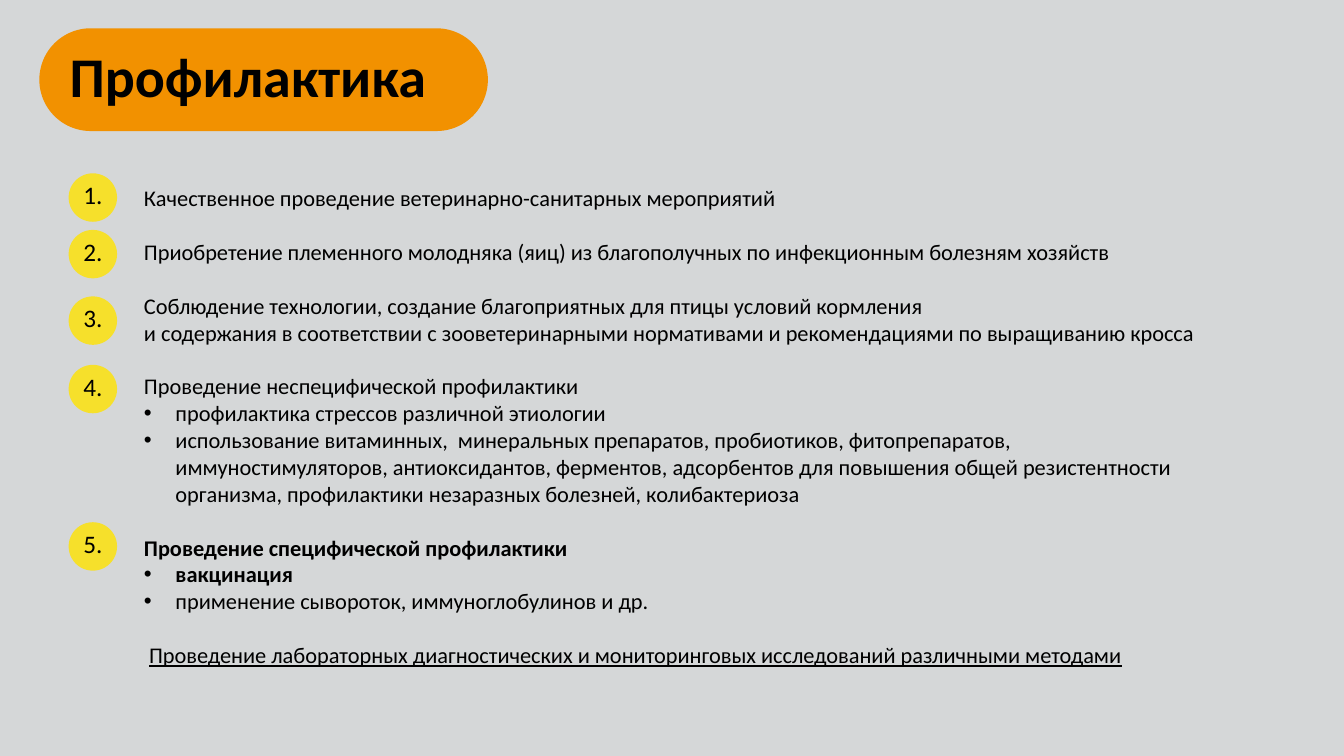
"""Build the slide on disease prevention in poultry farming."""
from lxml import etree
from pptx import Presentation
from pptx.dml.color import RGBColor
from pptx.enum.shapes import MSO_SHAPE
from pptx.enum.text import MSO_ANCHOR, MSO_AUTO_SIZE, PP_ALIGN
from pptx.oxml.ns import qn
from pptx.util import Pt

ROUNDED, OVAL = MSO_SHAPE.ROUNDED_RECTANGLE, MSO_SHAPE.OVAL
LEFT, CENTER = PP_ALIGN.LEFT, PP_ALIGN.CENTER
TOP, MIDDLE = MSO_ANCHOR.TOP, MSO_ANCHOR.MIDDLE
NO_AUTOFIT = MSO_AUTO_SIZE.NONE

GRAY = RGBColor(0xD5, 0xD7, 0xD8)
ORANGE = RGBColor(0xF2, 0x91, 0x00)
YELLOW = RGBColor(0xF6, 0xE0, 0x2B)
BLACK = RGBColor(0x00, 0x00, 0x00)

TITLE_ONLY = 5
BODY_SIZE = 16
ITEM_GAP = 19.2
BADGE_SIZE = 34.6
BADGE_TOPS = [123.8, 164.2, 211.7, 260.6, 373]

ITEMS = [
    ("Качественное проведение ветеринарно-санитарных мероприятий", {}),
    ("Приобретение племенного молодняка (яиц) из благополучных по инфекционным болезням хозяйств", {}),
    ("Соблюдение технологии, создание благоприятных для птицы условий кормления\v"
     "и содержания в соответствии с зооветеринарными нормативами и рекомендациями по выращиванию кросса", {}),
    ("Проведение неспецифической профилактики", {}),
    ("профилактика стрессов различной этиологии", {"bullet": True}),
    ("использование витаминных,  минеральных препаратов, пробиотиков, фитопрепаратов, "
     "иммуностимуляторов, антиоксидантов, ферментов, адсорбентов для повышения общей "
     "резистентности организма, профилактики незаразных болезней, колибактериоза", {"bullet": True}),
    ("Проведение специфической профилактики", {"bold": True}),
    ("вакцинация", {"bullet": True, "bold": True}),
    ("применение сывороток, иммуноглобулинов и др.", {"bullet": True}),
    ("Проведение лабораторных диагностических и мониторинговых исследований различными методами",
     {"underline": True, "margin": 10.1}),
]


def write(paragraph, text, size, bold=False, underline=False, align=LEFT,
          bullet=False, margin=0, space_before=0):
    paragraph.text = text
    paragraph.alignment = align
    paragraph.space_before = Pt(space_before)
    properties = paragraph._p.get_or_add_pPr()
    properties.set("marL", str(Pt(29 if bullet else margin)))
    properties.set("indent", str(Pt(-22.5 if bullet else 0)))
    if bullet:
        etree.SubElement(properties, qn("a:buFont"), typeface="Arial")
        etree.SubElement(properties, qn("a:buChar"), char="•")
    for line_break in paragraph._p.findall(qn("a:br")):
        etree.SubElement(line_break, qn("a:rPr"), sz=str(size * 100))
    for run in paragraph.runs:
        run.font.name = "Calibri"
        run.font.size = Pt(size)
        run.font.bold = bold
        run.font.underline = underline
        run.font.color.rgb = BLACK


def add_filled(slide, kind, left, top, width, height, color):
    shape = slide.shapes.add_shape(kind, Pt(left), Pt(top), Pt(width), Pt(height))
    shape.shadow.inherit = False
    shape.fill.solid()
    shape.fill.fore_color.rgb = color
    shape.line.fill.background()
    return shape


presentation = Presentation()
presentation.slide_width = Pt(960)
presentation.slide_height = Pt(540)
slide = presentation.slides.add_slide(presentation.slide_layouts[TITLE_ONLY])
slide.background.fill.solid()
slide.background.fill.fore_color.rgb = GRAY

title = slide.shapes.title
title.left, title.top, title.width, title.height = Pt(42.5), Pt(26), Pt(291), Pt(55.5)
title.text_frame.auto_size = NO_AUTOFIT
title.text_frame.vertical_anchor = TOP
write(title.text_frame.paragraphs[0], "Профилактика", 40, bold=True)

title_pill = add_filled(slide, ROUNDED, 28.1, 20.2, 320.4, 73.4, ORANGE)
title_pill.adjustments[0] = 0.5
title.element.addprevious(title_pill.element)

body = slide.shapes.add_textbox(Pt(89.3), Pt(128.2), Pt(777.6), Pt(356.4))
body.text_frame.word_wrap = True
for index, (text, style) in enumerate(ITEMS):
    first = index == 0
    paragraph = body.text_frame.paragraphs[0] if first else body.text_frame.add_paragraph()
    gap = 0 if first or style.get("bullet") else ITEM_GAP
    write(paragraph, text, BODY_SIZE, **{"margin": 6.5, "space_before": gap, **style})

for number, top in enumerate(BADGE_TOPS, start=1):
    badge = add_filled(slide, OVAL, 49, top, BADGE_SIZE, BADGE_SIZE, YELLOW)
    frame = badge.text_frame
    frame.word_wrap = False
    frame.vertical_anchor = MIDDLE
    frame.margin_left = frame.margin_right = frame.margin_top = 0
    frame.margin_bottom = Pt(4)
    write(frame.paragraphs[0], f"{number}.", 18, align=CENTER)

presentation.save("out.pptx")
